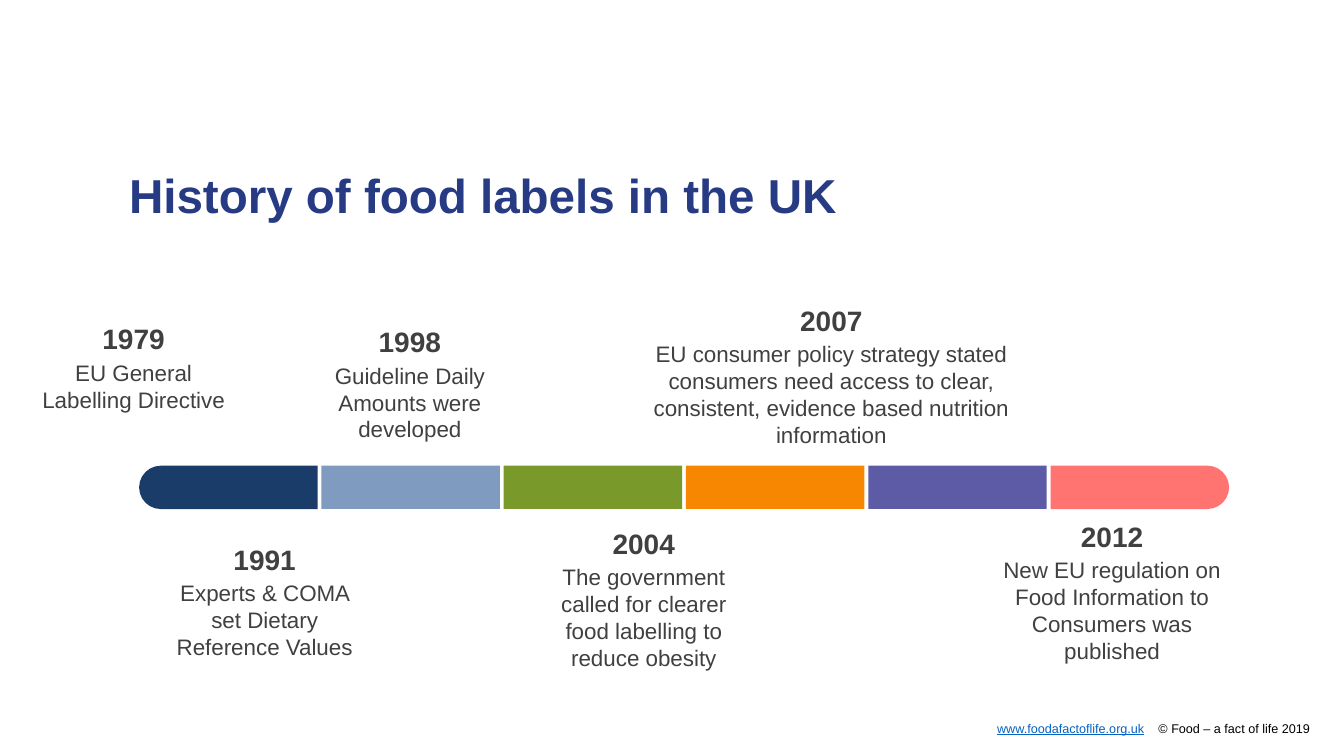
from lxml import etree
from pptx import Presentation
from pptx.dml.color import RGBColor
from pptx.enum import shapes, text
from pptx.oxml import ns
from pptx.util import Inches, Pt

NAVY = RGBColor(0x26, 0x3B, 0x83)
GREY = RGBColor(0x40, 0x40, 0x40)
BLACK = RGBColor(0, 0, 0)
LINK_BLUE = RGBColor(0x05, 0x63, 0xC1)
BAR_COLORS = [
    RGBColor(0x19, 0x3C, 0x69),
    RGBColor(0x7F, 0x9B, 0xC0),
    RGBColor(0x79, 0x9A, 0x2B),
    RGBColor(0xF7, 0x86, 0x00),
    RGBColor(0x5D, 0x5B, 0xA5),
    RGBColor(0xFF, 0x74, 0x71),
]

# Timeline bar geometry, in inches
BAR_LEFT, BAR_RIGHT, BAR_TOP = 1.38, 12.19, 4.62
SEGMENT_WIDTH, SEGMENT_HEIGHT = 1.77, 0.43

# Year, description, and left, top, width, height of the label
EVENTS = [
    ("1979", "EU General Labelling Directive", (0.38, 3.19, 1.89, 0.92)),
    ("1991", "Experts & COMA set Dietary Reference Values", (1.68, 5.38, 1.89, 1.19)),
    ("1998", "Guideline Daily Amounts were developed", (3.12, 3.22, 1.89, 1.19)),
    ("2004", "The government called for clearer food labelling to reduce obesity",
     (5.44, 5.22, 1.89, 1.46)),
    ("2007", "EU consumer policy strategy stated consumers need access to clear, "
     "consistent, evidence based nutrition information", (6.42, 3.01, 3.65, 1.73)),
    ("2012", "New EU regulation on Food Information to Consumers was published",
     (9.8, 5.15, 2.46, 1.46)),
]


class TimelineSlide:
    font_name = "Arial"
    frame_format = {
        "margin_left": 0, "margin_right": 0, "margin_top": 0, "margin_bottom": 0,
        "word_wrap": True,
        "auto_size": text.MSO_AUTO_SIZE.NONE,
        "vertical_anchor": text.MSO_ANCHOR.TOP,
    }

    def __init__(self, presentation):
        self.slide = presentation.slides.add_slide(presentation.slide_layouts[5])

    def apply(self, target, values):
        for name, value in values.items():
            setattr(target, name, value)

    def add_run(self, paragraph, words, size, color, bold=False, underline=False):
        run = paragraph.add_run()
        run.text = words
        self.apply(run.font, {"name": self.font_name, "size": Pt(size),
                              "bold": bold, "underline": underline})
        run.font.color.rgb = color

    def add_frame(self, box):
        frame = self.slide.shapes.add_textbox(*map(Inches, box)).text_frame
        self.apply(frame, self.frame_format)
        return frame

    def add_title(self, words, box):
        title = self.slide.shapes.title
        self.apply(title, dict(zip(("left", "top", "width", "height"), map(Inches, box))))
        self.apply(title.text_frame, self.frame_format)
        paragraph = title.text_frame.paragraphs[0]
        self.apply(paragraph, {"alignment": text.PP_ALIGN.LEFT, "line_spacing": 0.9})
        self.add_run(paragraph, words, 34, NAVY, bold=True)

    def add_segment(self, left, color, rotation=None):
        """A flat bar segment, or an end with a round cap when rotated."""
        width, height, top = SEGMENT_WIDTH, SEGMENT_HEIGHT, BAR_TOP
        kind = shapes.MSO_SHAPE.RECTANGLE
        if rotation is not None:
            kind = shapes.MSO_SHAPE.ROUND_2_SAME_RECTANGLE
            shift = (width - height) / 2
            left, top, width, height = left + shift, top - shift, height, width
        segment = self.slide.shapes.add_shape(
            kind, *map(Inches, (left, top, width, height)))
        if rotation is not None:
            segment.rotation = rotation
            segment.adjustments[0] = 0.5
        segment.shadow.inherit = False
        segment.fill.solid()
        segment.fill.fore_color.rgb = color
        segment.line.fill.background()

    def add_event(self, year, description, box):
        frame = self.add_frame(box)
        heading, body = frame.paragraphs[0], frame.add_paragraph()
        self.apply(heading, {"alignment": text.PP_ALIGN.CENTER, "space_after": Pt(2.6)})
        body.alignment = text.PP_ALIGN.CENTER
        self.add_run(heading, year, 20, GREY, bold=True)
        self.add_run(body, description, 16, GREY)

    def add_footer(self, address, notice, box, tab_position):
        paragraph = self.add_frame(box).paragraphs[0]
        paragraph.alignment = text.PP_ALIGN.LEFT
        properties = paragraph._p.get_or_add_pPr()
        tabs = etree.SubElement(properties, ns.qn("a:tabLst"))
        etree.SubElement(tabs, ns.qn("a:tab"), pos=str(Inches(tab_position)), algn="l")
        self.add_run(paragraph, address, 9, LINK_BLUE, underline=True)
        self.add_run(paragraph, "\t" + notice, 9, BLACK)


def main():
    presentation = Presentation()
    presentation.slide_width = Inches(13.33)
    presentation.slide_height = Inches(7.5)
    timeline = TimelineSlide(presentation)

    # Title and footer
    timeline.add_title("History of food labels in the UK", (1.28, 1.71, 10.63, 0.79))
    timeline.add_footer("www.foodafactoflife.org.uk", "© Food – a fact of life 2019",
                        (9.89, 7.15, 3.2, 0.15), 1.6)

    # Timeline bar with rounded ends
    last = len(BAR_COLORS) - 1
    pitch = (BAR_RIGHT - BAR_LEFT - SEGMENT_WIDTH) / last
    end_rotations = {0: 270, last: 90}
    for index, color in enumerate(BAR_COLORS):
        timeline.add_segment(BAR_LEFT + index * pitch, color, end_rotations.get(index))

    # Event labels
    for event in EVENTS:
        timeline.add_event(*event)

    presentation.save("out.pptx")


if __name__ == "__main__":
    main()
